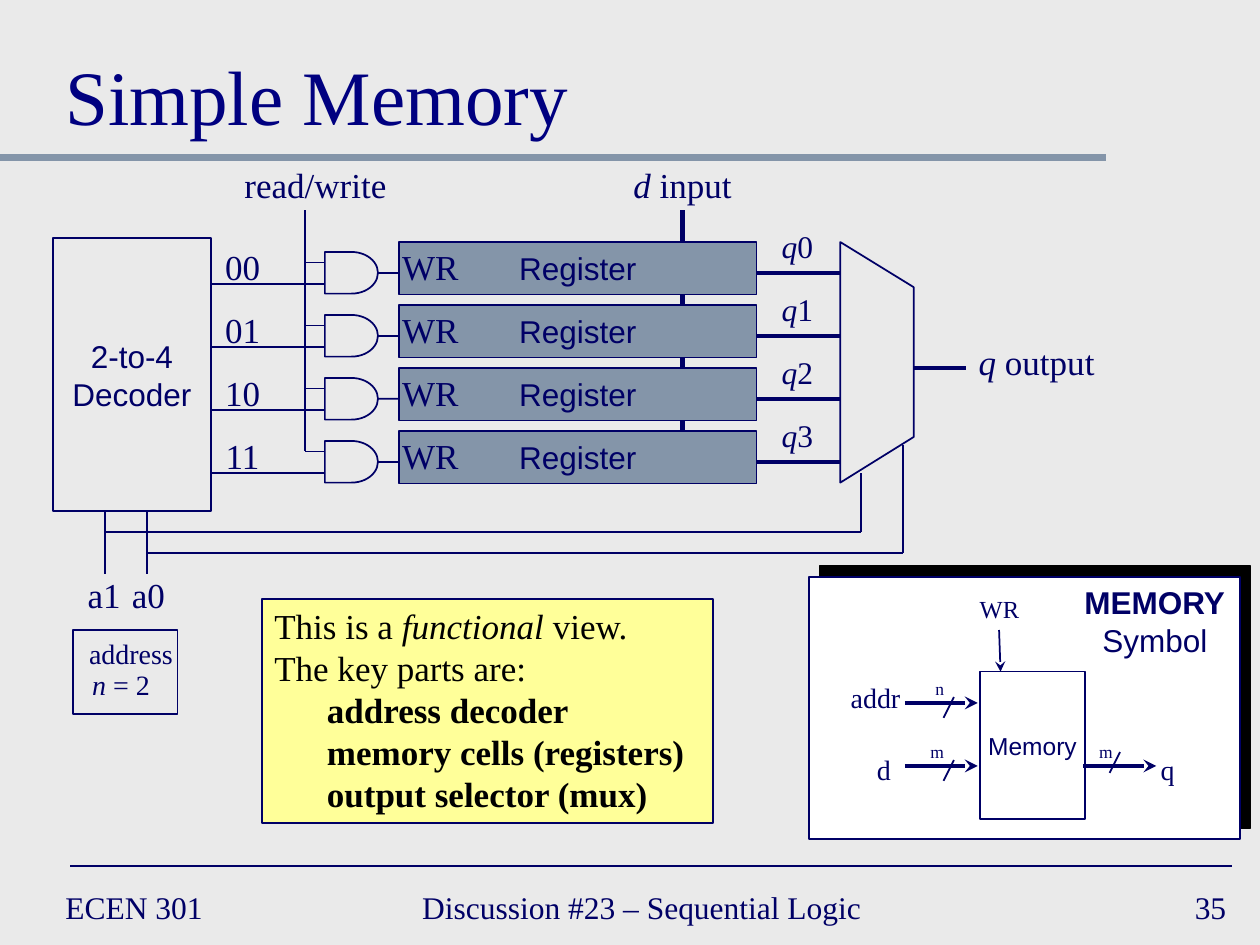
from dataclasses import dataclass

from lxml.etree import SubElement
from pptx import Presentation
from pptx.dml.color import RGBColor
from pptx.enum.shapes import MSO_CONNECTOR, MSO_SHAPE
from pptx.enum.text import MSO_ANCHOR, PP_ALIGN
from pptx.oxml.ns import qn
from pptx.util import Cm, Pt


@dataclass(frozen=True)
class Theme:
    backdrop: RGBColor = RGBColor.from_string("EAEAEA")
    ink: RGBColor = RGBColor.from_string("000066")
    heading: RGBColor = RGBColor.from_string("000080")
    slate: RGBColor = RGBColor.from_string("8495A9")
    note: RGBColor = RGBColor.from_string("FFFF99")
    white: RGBColor = RGBColor.from_string("FFFFFF")
    black: RGBColor = RGBColor.from_string("000000")
    serif: str = "Times New Roman"
    sans: str = "Arial"
    title: int = 44
    label: int = 20
    body: int = 18
    small: int = 16
    symbol: int = 14
    tiny: int = 10
    thin: float = 1
    bus: float = 2.5


theme = Theme()
LEFT, CENTER, RIGHT = PP_ALIGN.LEFT, PP_ALIGN.CENTER, PP_ALIGN.RIGHT

prs = Presentation()
prs.slide_width, prs.slide_height = Cm(25.4), Cm(19.05)
slide = prs.slides.add_slide(prs.slide_layouts[6])
slide.background.fill.solid()
slide.background.fill.fore_color.rgb = theme.backdrop
shapes = slide.shapes


def write(shape, text, size, align=CENTER, font=theme.serif, color=theme.ink,
          anchor=MSO_ANCHOR.TOP):
    """Fill a shape with lines of text; parts between underscores are italic."""
    frame = shape.text_frame
    frame.word_wrap = True
    frame.vertical_anchor = anchor
    if align == CENTER:
        frame.margin_left = frame.margin_right = 0
    for number, line in enumerate(text.split("\n")):
        paragraph = frame.add_paragraph() if number else frame.paragraphs[0]
        paragraph.alignment = align
        for part, words in enumerate(line.split("_")):
            if words:
                run = paragraph.add_run()
                run.text = words
                run.font.name, run.font.size = font, Pt(size)
                run.font.color.rgb = color
                run.font.italic = part % 2 == 1


def wire(x1, y1, x2, y2, width=theme.thin, color=theme.ink, arrow=False):
    line = shapes.add_connector(MSO_CONNECTOR.STRAIGHT, Cm(x1), Cm(y1), Cm(x2), Cm(y2))
    line.line.width, line.line.color.rgb = Pt(width), color
    if arrow:
        SubElement(line.line._get_or_add_ln(), qn("a:tailEnd"), type="stealth")
    SubElement(line._element.spPr, qn("a:effectLst"))
    return line


# Rules and the data and write lines that run behind the registers
wire(0, 3.18, 22.3, 3.18, 4, theme.slate)
wire(1.42, 17.46, 24.84, 17.46)
wire(13.76, 4.24, 13.76, 8.66, theme.bus)
wire(6.15, 4.24, 6.15, 9.09)

# Boxes: left, top, width, height, shape, fill
PITCH = 1.27
rows = [row * PITCH for row in range(4)]
box_specs = [
    (1.07, 4.8, 3.18, 5.51, MSO_SHAPE.RECTANGLE, None),
    (5.28, 12.07, 9.09, 4.52, MSO_SHAPE.RECTANGLE, theme.note),
    (16.31, 11.63, 8.69, 5.28, MSO_SHAPE.RECTANGLE, theme.white),
    (19.76, 13.54, 2.11, 2.97, MSO_SHAPE.RECTANGLE, None),
    (1.47, 12.7, 2.11, 1.7, MSO_SHAPE.RECTANGLE, None),
]
box_specs += [(8.05, 4.88 + dy, 7.2, 1.06, MSO_SHAPE.RECTANGLE, theme.slate) for dy in rows]
box_specs += [(6.55, 5.08 + dy, 1.07, 0.84, MSO_SHAPE.FLOWCHART_DELAY, None) for dy in rows]
boxes = []
for x, y, w, h, outline, fill in box_specs:
    box = shapes.add_shape(outline, Cm(x), Cm(y), Cm(w), Cm(h))
    box.shadow.inherit = False
    box.line.color.rgb, box.line.width = theme.ink, Pt(theme.thin)
    if fill is None:
        box.fill.background()
    else:
        box.fill.solid()
        box.fill.fore_color.rgb = fill
    boxes.append(box)
decoder, note, panel, memory, address_frame = boxes[:5]
registers, gates = boxes[5:9], boxes[9:]

shadow = SubElement(panel._element.spPr.find(qn("a:effectLst")), qn("a:outerShdw"),
                    dist=str(Pt(8.5)), dir="18900000", algn="ctr", rotWithShape="0")
SubElement(shadow, qn("a:srgbClr"), val=str(theme.black))

write(decoder, "2-to-4\nDecoder", theme.body, font=theme.sans, anchor=MSO_ANCHOR.MIDDLE)
write(memory, "Memory", theme.symbol, font=theme.sans, anchor=MSO_ANCHOR.MIDDLE)
for register in registers:
    write(register, "Register", theme.body, font=theme.sans, anchor=MSO_ANCHOR.MIDDLE)

write(note, "This is a _functional_ view.\nThe key parts are:\naddress decoder\n"
      "memory cells (registers)\noutput selector (mux)", theme.label, LEFT, color=theme.black)
for key_part in note.text_frame.paragraphs[2:]:
    key_part._p.get_or_add_pPr().set("marL", str(Cm(1.06)))
    key_part.runs[0].font.bold = True

# Output selector
mux_pen = shapes.build_freeform(Cm(16.94), Cm(9.73))
mux_pen.add_line_segments([(Cm(18.42), Cm(8.81)), (Cm(18.42), Cm(5.79)), (Cm(16.94), Cm(4.88))])
mux = mux_pen.convert_to_shape()
mux.shadow.inherit = False
mux.fill.background()
mux.line.color.rgb, mux.line.width = theme.ink, Pt(theme.thin)

# Wires of each memory row
for dy, gate in zip(rows, gates):
    wire(4.25, 5.73 + dy, 6.55, 5.73 + dy)
    wire(6.15, 5.29 + dy, 6.55, 5.29 + dy)
    wire(7.62, 5.5 + dy, 8.05, 5.5 + dy).begin_connect(gate, 3)
    wire(15.25, 5.5 + dy, 16.94, 5.5 + dy, theme.bus)
wire(18.42, 7.42, 19.47, 7.42, theme.bus)

# Address bits to decoder and mux
for bit_x, turn_y, mux_x, mux_y in [(2.11, 10.72, 17.35, 9.53), (2.97, 11.15, 18.21, 8.97)]:
    wire(bit_x, 10.31, bit_x, 11.58)
    wire(bit_x, turn_y, mux_x, turn_y)
    wire(mux_x, turn_y, mux_x, mux_y)

# Memory symbol: buses with their width slashes
for x, y in [(18.24, 14.17), (18.24, 15.44), (21.84, 15.44)]:
    wire(x, y, x + 1.47, y, theme.bus, arrow=True)
for x, y in [(19.23, 14.05), (19.23, 15.32), (22.58, 15.16)]:
    wire(x, y, x - 0.21, y + 0.42)
wire(20.14, 12.7, 20.17, 13.54, arrow=True)

# Labels: text, left, top, width, height, size, alignment
labels = [
    ("read/write", 4.24, 3.18, 4.24, 1.09, theme.label, CENTER),
    ("_d_ input", 12.07, 3.18, 3.38, 1.09, theme.label, CENTER),
    ("_q_ output", 19.48, 6.73, 3.18, 1.09, theme.label, LEFT),
    ("a1", 1.45, 11.43, 1.3, 1.09, theme.label, CENTER),
    ("a0", 2.34, 11.43, 1.3, 1.09, theme.label, CENTER),
    ("address", 1.27, 12.7, 2.74, 0.94, theme.small, CENTER),
    ("_n_ = 2", 1.27, 13.34, 2.34, 0.94, theme.small, CENTER),
    ("addr", 16.89, 13.59, 1.52, 0.94, theme.small, CENTER),
    ("d", 17.17, 15.04, 1.3, 0.94, theme.small, CENTER),
    ("q", 22.89, 15.04, 1.3, 0.94, theme.small, CENTER),
    ("WR", 19.35, 11.86, 1.6, 0.84, theme.symbol, CENTER),
    ("n", 18.44, 13.54, 0.84, 0.69, theme.tiny, RIGHT),
    ("m", 18.44, 14.81, 0.84, 0.69, theme.tiny, RIGHT),
    ("m", 21.84, 14.81, 0.84, 0.69, theme.tiny, RIGHT),
    ("ECEN 301", 1.07, 17.78, 5.51, 1.07, theme.body, LEFT),
    ("Discussion #23 – Sequential Logic", 8.26, 17.78, 9.73, 1.07, theme.body, LEFT),
    ("35", 19.69, 17.78, 5.28, 1.07, theme.body, RIGHT),
]
for row, dy in enumerate(rows):
    labels += [
        (f"{row:02b}", 4.24, 4.83 + dy, 1.3, 1.09, theme.label, CENTER),
        ("WR", 7.62, 4.83 + dy, 2.11, 1.09, theme.label, CENTER),
        (f"_q_{row}", 15.44, 4.45 + dy, 1.27, 1.02, theme.body, CENTER),
    ]
for text, x, y, w, h, size, align in labels:
    write(shapes.add_textbox(Cm(x), Cm(y), Cm(w), Cm(h)), text, size, align)

symbol_heading = shapes.add_textbox(Cm(21.59), Cm(11.63), Cm(3.38), Cm(1.78))
write(symbol_heading, "MEMORY\nSymbol", theme.body, font=theme.sans)
symbol_heading.text_frame.paragraphs[0].runs[0].font.bold = True

title = shapes.add_textbox(Cm(1.07), Cm(0.43), Cm(23.29), Cm(2.54))
write(title, "Simple Memory", theme.title, LEFT, color=theme.heading, anchor=MSO_ANCHOR.BOTTOM)

prs.save("out.pptx")
